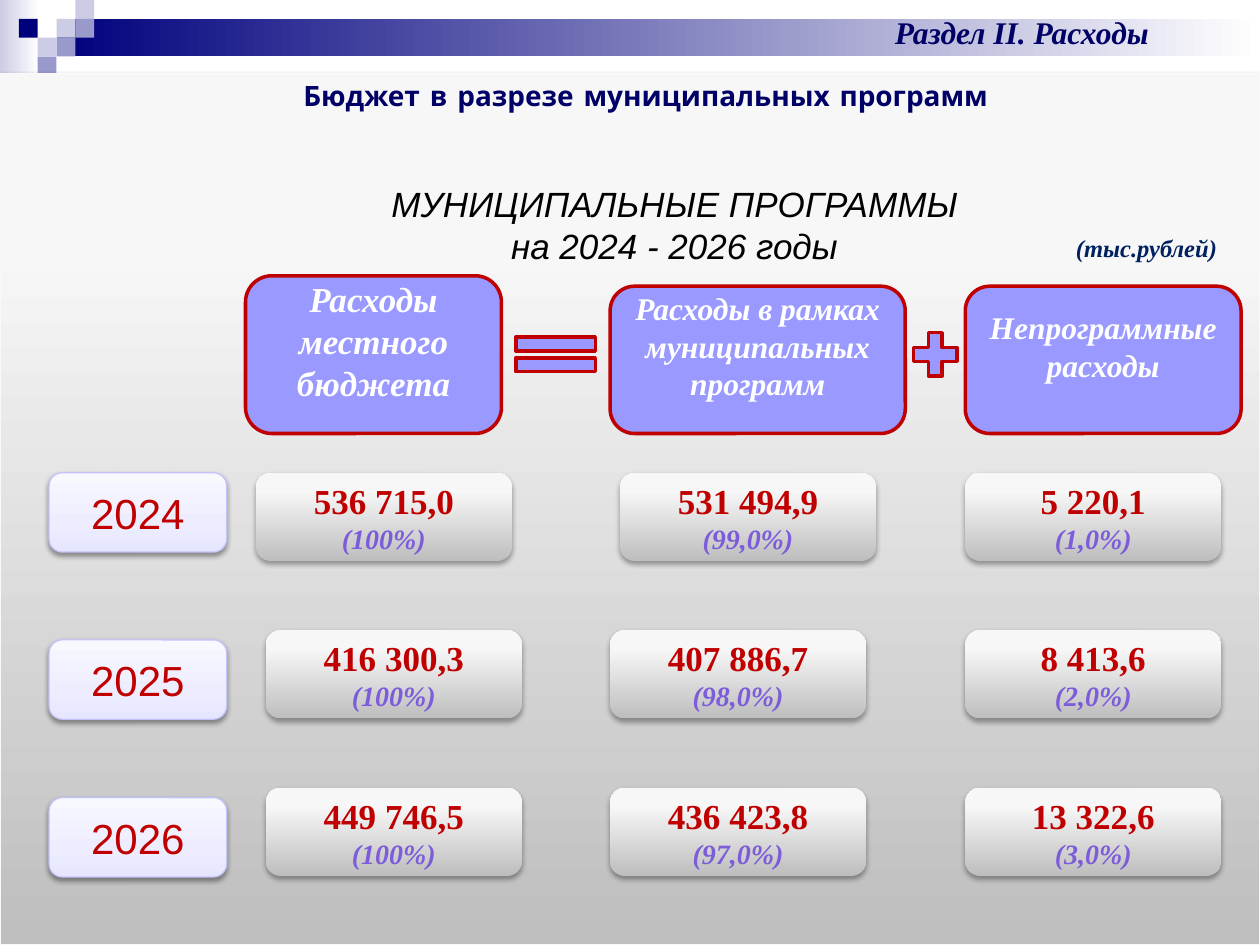
from lxml.etree import SubElement
from pptx import Presentation
from pptx.dml.color import RGBColor
from pptx.enum.shapes import MSO_SHAPE
from pptx.enum.text import MSO_ANCHOR, PP_ALIGN
from pptx.oxml.ns import qn
from pptx.util import Cm, Pt

COLORS = {
    "navy": "00007D", "lavender": "CCCCE6", "periwinkle": "9999CC",
    "box": "9999FF", "red": "C00000", "violet": "7D5CDA",
    "title": "000066", "unit": "002060", "white": "FFFFFF", "black": "000000",
    "panel_line": "F9F9F9", "year_line": "C4C4FB",
}
GRAY = [(0, "BEBEBE"), (80, "F7F7F7"), (100, "F8F8F8")]
PALE = [(0, "E6E6FF"), (35, "EDEDFF"), (100, "F8F8FF")]
SERIF = "Times New Roman"

# Content: lengths in centimetres, text sizes in points
SECTION = "Раздел II. Расходы"
HEADING = "Бюджет в разрезе муниципальных программ"
SUBTITLE = ["МУНИЦИПАЛЬНЫЕ ПРОГРАММЫ", "на 2024 - 2026 годы"]
UNIT = "(тыс.рублей)"
HEADERS = [  # text, left, top, width, height, size
    ("Расходы местного бюджета", 4.95, 5.56, 5.16, 3.18, 20),
    ("Расходы в рамках муниципальных программ", 12.3, 5.77, 5.95, 2.97, 18),
    ("Непрограммные расходы", 19.46, 5.77, 5.56, 2.97, 18),
]
SIGNS = [(MSO_SHAPE.MATH_EQUAL, 10.11, 2.18), (MSO_SHAPE.MATH_PLUS, 18.26, 1.19)]
ROWS = [  # year, top of year, lefts of values, values with shares
    ("2024", 9.53, (5.16, 12.5, 19.46),
     [("536 715,0", "(100%)"), ("531 494,9", "(99,0%)"), ("5 220,1", "(1,0%)")]),
    ("2025", 12.9, (5.36, 12.3, 19.46),
     [("416 300,3", "(100%)"), ("407 886,7", "(98,0%)"), ("8 413,6", "(2,0%)")]),
    ("2026", 16.08, (5.36, 12.3, 19.46),
     [("449 746,5", "(100%)"), ("436 423,8", "(97,0%)"), ("13 322,6", "(3,0%)")]),
]
FIRST_ROW, ROW_STEP = 9.53, 3.175
SQUARE = 0.38
SQUARES = [  # column, row, colour
    (2, 0, "lavender"), (3, -1, "lavender"), (3, 0, "periwinkle"),
    (1, 1, "lavender"), (0, 0, "navy"), (2, 1, "periwinkle"),
    (1, 2, "periwinkle"),
]

presentation = Presentation()
presentation.slide_width, presentation.slide_height = Cm(25.4), Cm(19.05)
slide = presentation.slides.add_slide(presentation.slide_layouts[6])


def rgb(name):
    return RGBColor.from_string(COLORS[name])


def set_gradient(shape, stops, angle):
    shape.fill.gradient()
    gradient = shape._element.spPr.find(qn("a:gradFill"))
    stop_list = gradient.find(qn("a:gsLst"))
    for stop in list(stop_list):
        stop_list.remove(stop)
    for position, color in stops:
        stop = SubElement(stop_list, qn("a:gs"), pos=str(position * 1000))
        SubElement(stop, qn("a:srgbClr"), val=color)
    gradient.find(qn("a:lin")).set("ang", str(angle * 60000))


def set_shadow(shape, opacity):
    effects = shape._element.spPr.find(qn("a:effectLst"))
    shadow = SubElement(effects, qn("a:outerShdw"), blurRad=str(Pt(3.1)),
                        dist=str(Pt(1.8)), dir="5400000", rotWithShape="0")
    color = SubElement(shadow, qn("a:srgbClr"), val=COLORS["black"])
    SubElement(color, qn("a:alpha"), val=str(opacity * 1000))


def add_shape(kind, left, top, width, height, fill, line=None, points=2,
              angle=270, opacity=None):
    shape = slide.shapes.add_shape(kind, Cm(left), Cm(top), Cm(width), Cm(height))
    shape.shadow.inherit = False
    if isinstance(fill, list):
        set_gradient(shape, fill, angle)
    else:
        shape.fill.solid()
        shape.fill.fore_color.rgb = rgb(fill)
    if line:
        shape.line.color.rgb = rgb(line)
        shape.line.width = Pt(points)
    else:
        shape.line.fill.background()
    if opacity:
        set_shadow(shape, opacity)
    return shape


def write(shape, lines, anchor=MSO_ANCHOR.MIDDLE, wrap=True, align=PP_ALIGN.CENTER):
    """Each line is (text, size, font, colour, bold, italic)."""
    frame = shape.text_frame
    frame.word_wrap = wrap
    frame.vertical_anchor = anchor
    for index, (text, size, name, color, bold, italic) in enumerate(lines):
        paragraph = frame.add_paragraph() if index else frame.paragraphs[0]
        paragraph.text = text
        paragraph.alignment = align
        font = paragraph.font
        font.size, font.name, font.bold, font.italic = Pt(size), name, bold, italic
        font.color.rgb = rgb(color)
    return frame


def add_text(left, top, width, height, lines, **options):
    box = slide.shapes.add_textbox(Cm(left), Cm(top), Cm(width), Cm(height))
    return write(box, lines, **options)


# Top band with its squares
add_shape(MSO_SHAPE.RECTANGLE, 0, 0, 0.79, 1.47,
          [(0, COLORS["lavender"]), (100, COLORS["white"])], angle=0)
add_shape(MSO_SHAPE.RECTANGLE, 1.14, SQUARE, 24.26, 0.76,
          [(0, COLORS["navy"]), (100, COLORS["white"])], angle=0)
for column, row, color in SQUARES:
    add_shape(MSO_SHAPE.RECTANGLE, SQUARE * (column + 1), SQUARE * (row + 1),
              SQUARE, SQUARE, color)

# Background panel
add_shape(MSO_SHAPE.FLOWCHART_PROCESS, 0, 1.48, 25.4, 17.57, GRAY,
          "panel_line", 0.75, opacity=35)

# Formula: total = programmes + other spending
for text, left, top, width, height, size in HEADERS:
    header = add_shape(MSO_SHAPE.ROUNDED_RECTANGLE, left, top, width, height,
                       "box", "red")
    frame = write(header, [(text, size, SERIF, "white", True, True)])
    frame.margin_bottom = Cm(0.7)
for kind, left, width in SIGNS:
    add_shape(kind, left, 6.55, width, 1.19, "box", "red")

# Years and values
for index, (year, year_top, lefts, values) in enumerate(ROWS):
    year_box = add_shape(MSO_SHAPE.ROUNDED_RECTANGLE, 0.99, year_top, 3.58, 1.6,
                         PALE, "year_line", 0.75, opacity=38)
    write(year_box, [(year, 24, "Arial", "red", False, False)])
    for left, (amount, share) in zip(lefts, values):
        value_box = add_shape(MSO_SHAPE.ROUNDED_RECTANGLE, left,
                              FIRST_ROW + index * ROW_STEP, 5.16, 1.78,
                              GRAY, opacity=35)
        write(value_box, [(amount, 20, SERIF, "red", True, False),
                          (share, 16, SERIF, "violet", True, True)])

# Titles and unit
subtitle = add_text(2.13, 3.53, 21.67, 2.74,
                    [(text, 20, "Arial", "black", False, True) for text in SUBTITLE])
subtitle.margin_left, subtitle.margin_bottom = Cm(1.52), Cm(0.86)
add_text(21.44, 4.57, 3.38, 0.86, [(UNIT, 14, SERIF, "unit", True, True)],
         anchor=MSO_ANCHOR.TOP, wrap=False, align=PP_ALIGN.LEFT)
add_text(15.9, 0.13, 9.4, 1.02, [(SECTION, 18, SERIF, "title", True, True)],
         anchor=MSO_ANCHOR.TOP)
add_text(2.24, 1.45, 21.56, 0.94, [(HEADING, 16, "Comic Neue", "title", True, False)],
         anchor=MSO_ANCHOR.TOP)

presentation.save("out.pptx")
